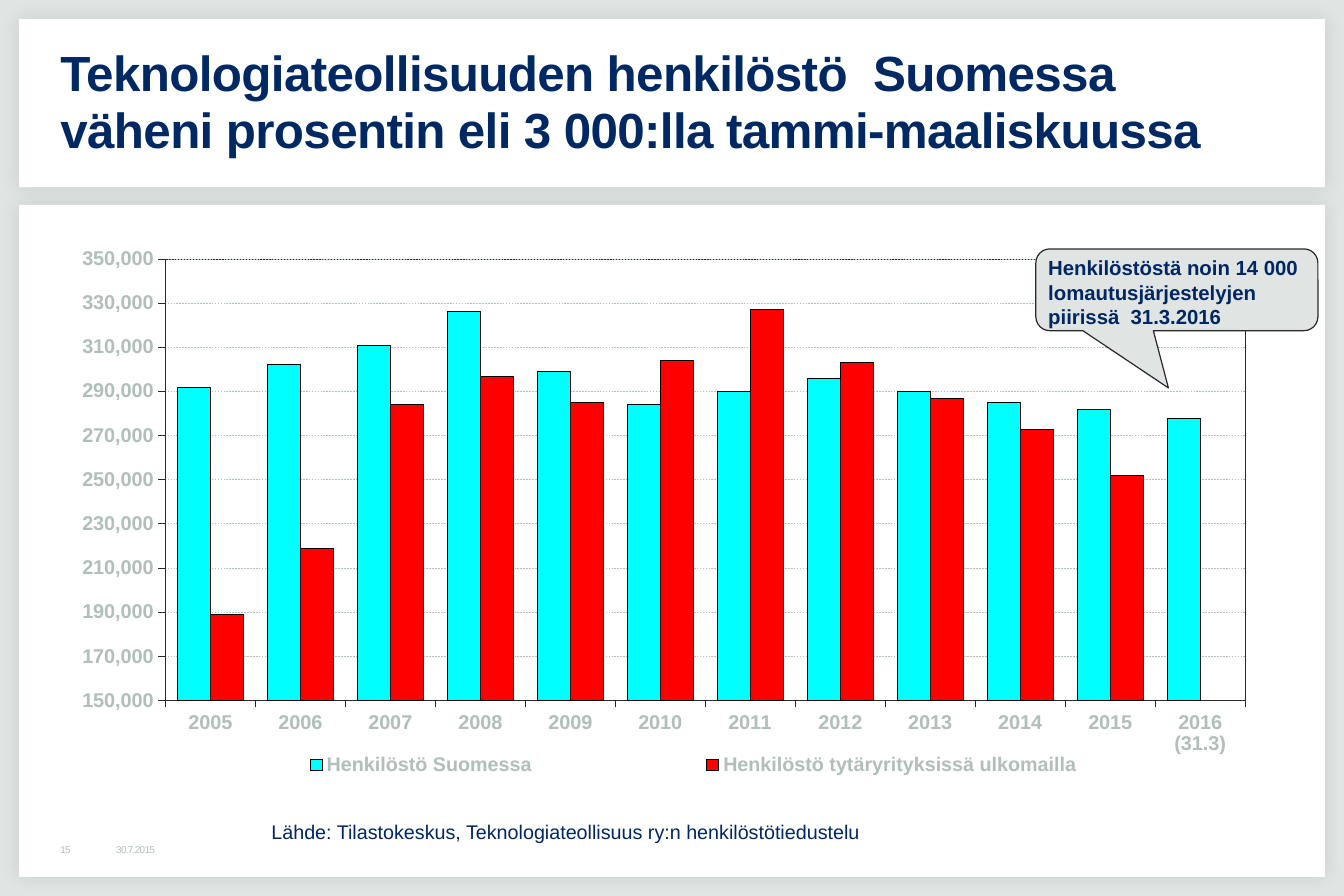
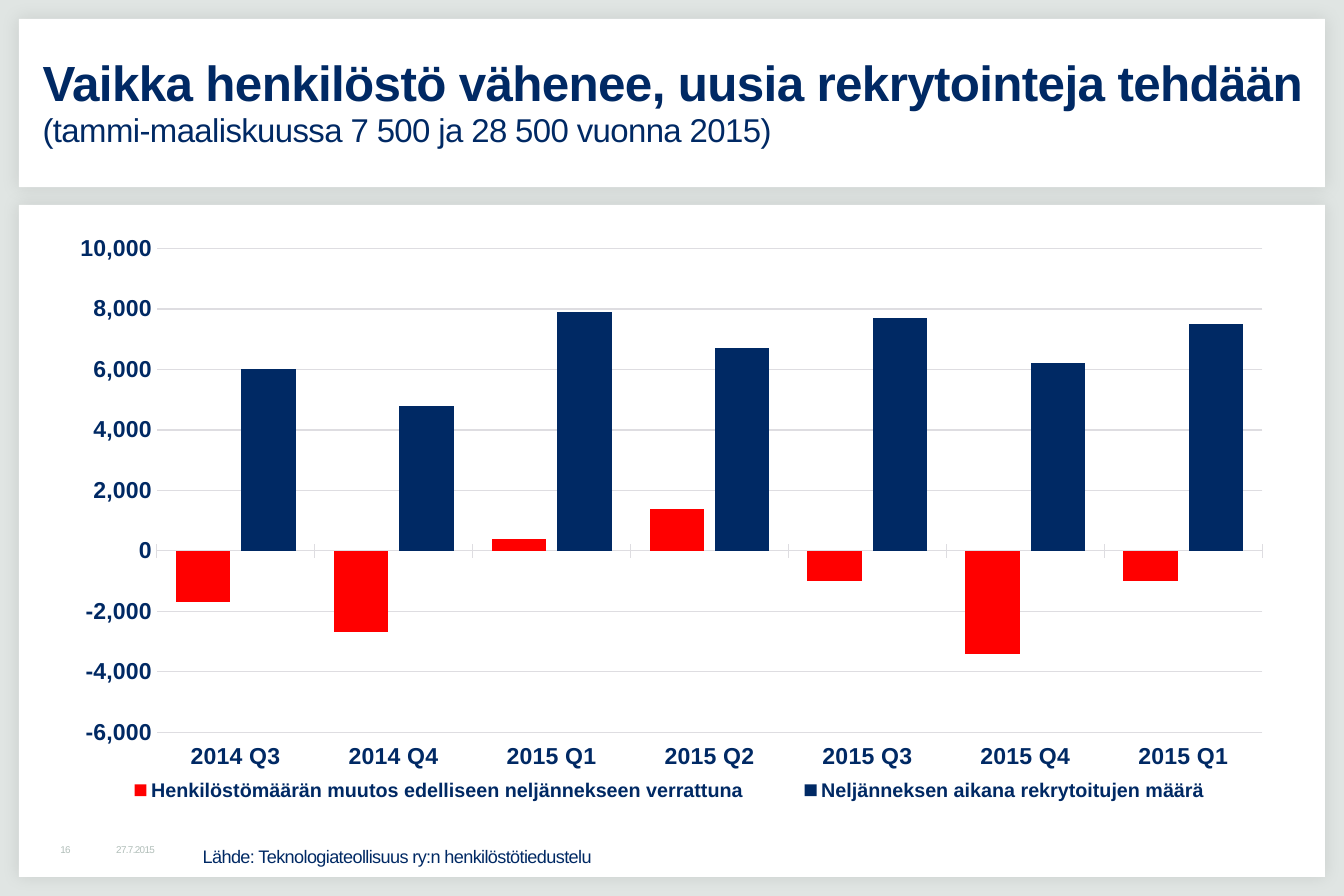
from lxml.etree import SubElement
from pptx import Presentation
from pptx.chart.data import CategoryChartData
from pptx.dml.color import RGBColor
from pptx.enum.chart import XL_CHART_TYPE, XL_LEGEND_POSITION, XL_TICK_LABEL_POSITION, XL_TICK_MARK
from pptx.enum.dml import MSO_LINE
from pptx.enum.shapes import MSO_SHAPE
from pptx.enum.text import MSO_ANCHOR, PP_ALIGN
from pptx.oxml import parse_xml
from pptx.oxml.ns import nsdecls, qn
from pptx.util import Inches, Pt

NAVY, DEEP_NAVY, INK = "002964", "002664", "29282E"
GREY, RULE, PALE, WHITE = "B1BEB9", "DEDDE1", "E0E5E3", "FFFFFF"
RED, CYAN, BLACK = "FF0000", "00FFFF", "000000"
SHADOW = (
    f'<a:effectLst {nsdecls("a")}><a:outerShdw blurRad="127000" dist="0" dir="2700000" '
    'algn="ctr" rotWithShape="0"><a:srgbClr val="000000"><a:alpha val="10000"/>'
    "</a:srgbClr></a:outerShdw></a:effectLst>"
)


def rgb(color):
    return RGBColor.from_string(color)


def box(left, top, width, height):
    return [Inches(n) for n in (left, top, width, height)]


class Deck:
    """Holds the shared style and the slide being built."""

    def __init__(self):
        self.prs = Presentation()
        self.prs.slide_width, self.prs.slide_height = Inches(11.34), Inches(7.56)
        fill = self.prs.slide_master.background.fill
        fill.solid()
        fill.fore_color.rgb = rgb(PALE)

    def slide(self, number, date):
        self.s = self.prs.slides.add_slide(self.prs.slide_layouts[6])
        for top, height in ((0.16, 1.42), (1.73, 5.67)):
            sp = self.shape(MSO_SHAPE.RECTANGLE, (0.16, top, 11.02, height), WHITE)
            sp._element.spPr.remove(sp._element.spPr.find(qn("a:effectLst")))
            sp._element.spPr.append(parse_xml(SHADOW))
        for text, left, width in ((date, 0.94, 1.42), (number, 0.47, 0.47)):
            self.text(text, (left, 7.09, width, 0.16), 6, GREY, anchor=MSO_ANCHOR.MIDDLE)

    def shape(self, kind, at, fill, line=None):
        sp = self.s.shapes.add_shape(kind, *box(*at))
        sp.shadow.inherit = False
        sp.fill.solid()
        sp.fill.fore_color.rgb = rgb(fill)
        self.line(sp.line, line, 0.75)
        return sp

    def line(self, line, color, width):
        if color is None:
            line.fill.background()
        else:
            line.color.rgb = rgb(color)
            line.width = Pt(width)

    def font(self, font, size, color, bold=False):
        font.name, font.size, font.bold = "Arial", Pt(size), bold
        font.color.rgb = rgb(color)

    def frame(self, tf, insets, anchor, wrap=True):
        tf.word_wrap, tf.vertical_anchor = wrap, anchor
        tf.margin_left, tf.margin_top, tf.margin_right, tf.margin_bottom = box(*insets)

    def text(self, text, at, size, color, bold=False, insets=(0.04,) * 4,
             anchor=MSO_ANCHOR.TOP, tight=True):
        tf = self.s.shapes.add_textbox(*box(*at)).text_frame
        self.frame(tf, insets, anchor)
        p = tf.paragraphs[0]
        p.add_run().text = text
        self.font(p.font, size, color, bold)
        if tight:
            p._p.pPr.find(qn("a:defRPr")).set("spc", "-40")
        return p

    def title(self, text, at, subtitle=None):
        p = self.text(text, at, 30, NAVY, True, (0.04, 0.05, 0.1, 0.05), MSO_ANCHOR.MIDDLE)
        p.line_spacing = 0.95
        if subtitle:
            p.add_line_break()
            r = p.add_run()
            r.text = subtitle
            r.font.size, r.font.bold = Pt(20), False

    def callout(self, lines, at, adjustments):
        sp = self.shape(MSO_SHAPE.ROUNDED_RECTANGULAR_CALLOUT, at, PALE, INK)
        for i, value in enumerate(adjustments):
            sp.adjustments[i] = value
        tf = sp.text_frame
        self.frame(tf, (0.07, 0.02, 0, 0), MSO_ANCHOR.TOP, wrap=False)
        tf.text = "\n".join(lines)
        for p in tf.paragraphs:
            p.alignment = PP_ALIGN.LEFT
            self.font(p.font, 12.4, DEEP_NAVY, True)

    def chart(self, at, cats, series, gap, overlap, size, color, plot_at, legend_at,
              outline=None):
        data = CategoryChartData(number_format="#,##0")
        data.categories = cats
        for name, _, values in series:
            data.add_series(name, values)
        chart = self.s.shapes.add_chart(
            XL_CHART_TYPE.COLUMN_CLUSTERED, *box(*at), data).chart
        chart.has_title = False
        self.font(chart.font, size, color, True)
        chart.has_legend = True
        chart.legend.position = XL_LEGEND_POSITION.BOTTOM
        chart.legend.include_in_layout = False
        self.font(chart.legend.font, 12, color, True)
        plot = chart.plots[0]
        plot.vary_by_categories = False
        plot.gap_width, plot.overlap = gap, overlap
        for ser, (_, fill, _) in zip(plot.series, series):
            ser.invert_if_negative = False
            ser.format.fill.solid()
            ser.format.fill.fore_color.rgb = rgb(fill)
            self.line(ser.format.line, outline, 0.25)
        self.layout(chart._chartSpace.chart.plotArea, 0, plot_at, inner=True)
        self.layout(chart.legend._element, 1, legend_at)
        return chart

    def axis(self, axis, tick, line, width):
        axis.major_tick_mark, axis.minor_tick_mark = tick, XL_TICK_MARK.NONE
        self.line(axis.format.line, line, width)

    def scale(self, axis, low, high, step, grid, width):
        axis.minimum_scale, axis.maximum_scale, axis.major_unit = low, high, step
        axis.tick_labels.number_format = "#,##0"
        axis.tick_labels.number_format_is_linked = False
        axis.has_major_gridlines = True
        self.line(axis.major_gridlines.format.line, grid, width)

    def layout(self, parent, index, at, inner=False):
        for old in parent.findall(qn("c:layout")):
            parent.remove(old)
        layout = parse_xml(f'<c:layout {nsdecls("c")}><c:manualLayout/></c:layout>')
        values = [("layoutTarget", "inner")] if inner else []
        values += [("xMode", "edge"), ("yMode", "edge"), *zip("xywh", at)]
        for tag, value in values:
            SubElement(layout[0], qn(f"c:{tag}")).set("val", str(value))
        parent.insert(index, layout)


def staff_slide(deck):
    deck.slide("15", "30.7.2015")
    deck.title("Teknologiateollisuuden henkilöstö  Suomessa väheni prosentin eli "
               "3 000:lla tammi-maaliskuussa", (0.47, 0.32, 10.4, 1.1))
    cats = [str(year) for year in range(2005, 2016)] + ["2016 (31.3)"]
    chart = deck.chart((0.47, 1.89, 10.39, 4.73), cats, [
        ("Henkilöstö Suomessa", CYAN,
         (292000, 302000, 311000, 326000, 299000, 284000,
          290000, 296000, 290000, 285000, 282000, 278000)),
        ("Henkilöstö tytäryrityksissä ulkomailla", RED,
         (189000, 219000, 284000, 297000, 285000, 304000,
          327000, 303000, 287000, 273000, 252000, None)),
    ], 75, 0, 12.1, GREY, (0.089, 0.062, 0.877, 0.788), (0.07, 0.94, 0.896, 0.05), BLACK)
    for axis in (chart.category_axis, chart.value_axis):
        deck.axis(axis, XL_TICK_MARK.OUTSIDE, INK, 0.25)
    deck.scale(chart.value_axis, 150000, 350000, 20000, GREY, 0.25)
    chart.value_axis.major_gridlines.format.line.dash_style = MSO_LINE.DASH
    chart._chartSpace.chart.plotArea.append(parse_xml(
        f'<c:spPr {nsdecls("c", "a")}><a:noFill/><a:ln w="3175"><a:solidFill>'
        f'<a:srgbClr val="{INK}"/></a:solidFill></a:ln></c:spPr>'))
    deck.text("Lähde: Tilastokeskus, Teknologiateollisuus ry:n henkilöstötiedustelu",
              (2.21, 6.88, 5.99, 0.29), 12, DEEP_NAVY,
              insets=(0.08, 0.04, 0.08, 0.04), tight=False)
    deck.callout(("Henkilöstöstä noin 14 000", "lomautusjärjestelyjen",
                  "piirissä  31.3.2016"), (8.74, 2.1, 2.38, 0.69), (-0.03, 1.2, 0.17))


def recruitment_slide(deck):
    deck.slide("16", "27.7.2015")
    cats = ("2014 Q3", "2014 Q4", "2015 Q1", "2015 Q2", "2015 Q3", "2015 Q4", "2015 Q1")
    chart = deck.chart((0.47, 1.89, 10.39, 5.04), cats, [
        ("Henkilöstömäärän muutos edelliseen neljännekseen verrattuna", RED,
         (-1700, -2700, 400, 1400, -1000, -3400, -1000)),
        ("Neljänneksen aikana rekrytoitujen määrä", NAVY,
         (6000, 4800, 7900, 6700, 7700, 6200, 7500)),
    ], 70, -21, 14, NAVY, (0.082, 0.041, 0.898, 0.81), (0.02, 0.923, 0.957, 0.05))
    deck.axis(chart.category_axis, XL_TICK_MARK.CROSS, RULE, 0.75)
    chart.category_axis.tick_label_position = XL_TICK_LABEL_POSITION.LOW
    deck.axis(chart.value_axis, XL_TICK_MARK.NONE, None, 0.75)
    deck.scale(chart.value_axis, -6000, 10000, 2000, RULE, 0.75)
    deck.title("Vaikka henkilöstö vähenee, uusia rekrytointeja tehdään",
               (0.32, 0.32, 10.87, 1.1),
               "(tammi-maaliskuussa 7 500 ja 28 500 vuonna 2015)")
    deck.text("Lähde: Teknologiateollisuus ry:n henkilöstötiedustelu",
              (1.67, 7.09, 4.65, 0.26), 11, NAVY)


def main():
    deck = Deck()
    staff_slide(deck)
    recruitment_slide(deck)
    deck.prs.save("out.pptx")


if __name__ == "__main__":
    main()
